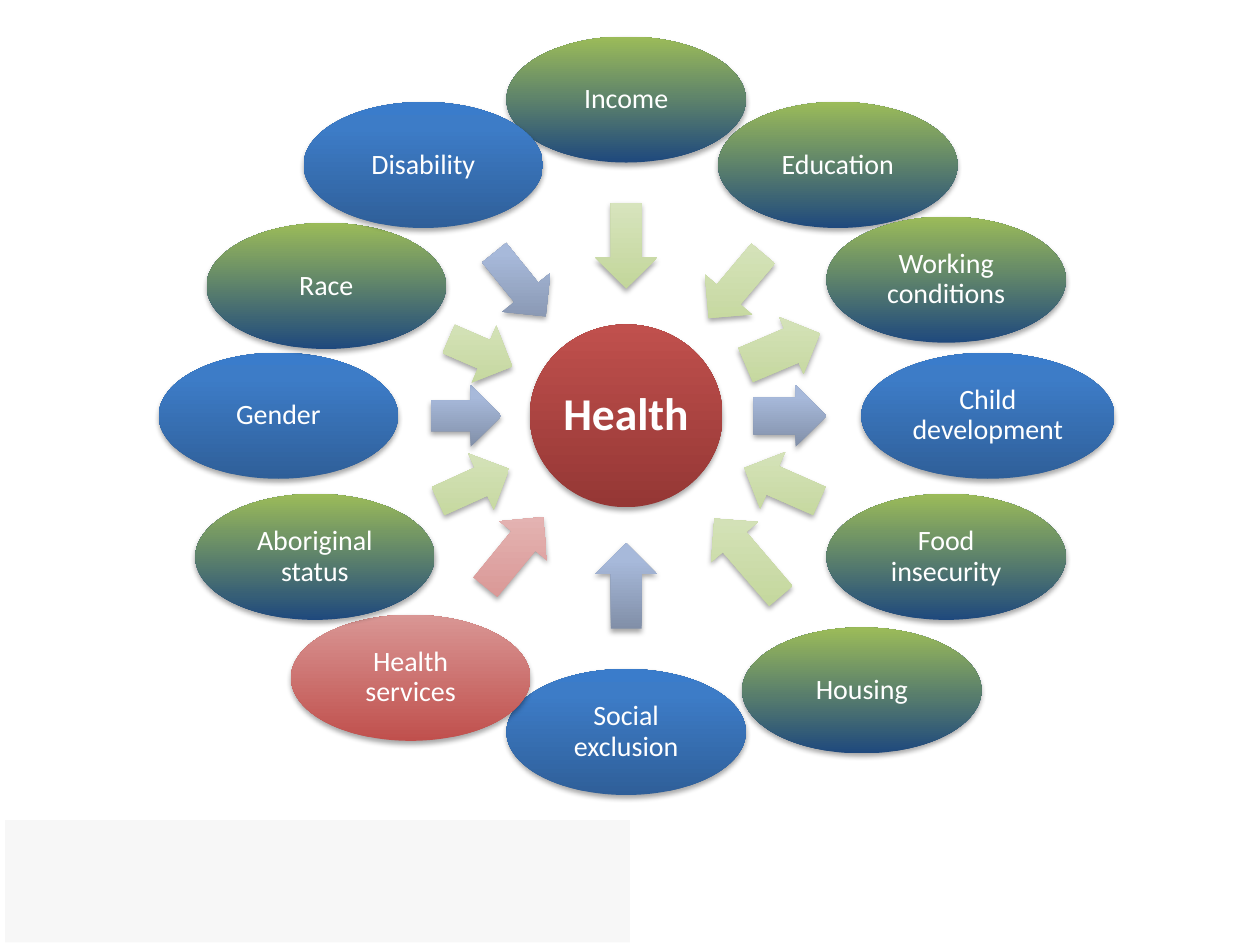
from collections import namedtuple
from dataclasses import dataclass
from math import atan2, cos, degrees, hypot, sin

from lxml import etree
from pptx import Presentation
from pptx.dml.color import RGBColor
from pptx.enum.shapes import MSO_SHAPE
from pptx.enum.text import MSO_ANCHOR, PP_ALIGN
from pptx.oxml.ns import qn
from pptx.util import Inches, Pt

OVAL = MSO_SHAPE.OVAL
RECTANGLE = MSO_SHAPE.RECTANGLE
INWARD = MSO_SHAPE.LEFT_ARROW
OUTWARD = MSO_SHAPE.RIGHT_ARROW
CENTER = PP_ALIGN.CENTER
MIDDLE = MSO_ANCHOR.MIDDLE

COLUMNS, ROWS = 100, 75
HUB_X, HUB_Y = 49.7, 33
OVAL_HEIGHT, ARROW_HEIGHT = 10, 4.9

BLUE_STOPS = ((0, "2F5F99"), (80, "3D7CC7"), (100, "3A7CCB"))
PALE_BLUE_STOPS = ((0, "818FA8"), (80, "A7B9DA"), (100, "A7BADC"))


@dataclass(frozen=True)
class Theme:
    font = "Calibri"
    text = "FFFFFF"
    band = "F7F7F7"
    shadow = "000000"
    hub_size = 26
    factor_size = 16
    hub = ((0, "953735"), (100, "C0504D"))
    ovals = {
        "green": ((0, "1F497D"), (100, "9BBB59")),
        "blue": BLUE_STOPS,
        "red": ((0, "C0504D"), (100, "D99694")),
    }
    arrows = {
        "green": ((0, "C3D69B"), (100, "D7E4BD")),
        "blue": PALE_BLUE_STOPS,
        "red": ((0, "D99694"), (100, "E6B9B8")),
    }


Factor = namedtuple(
    "Factor", "label tone dx dy reach length arrow shaft width",
    defaults=(INWARD, 0.5, 19),
)

FACTORS = [
    Factor("Income", "green", 0, -25.1, 13.5, 6.8),
    Factor("Education", "green", 16.8, -19.9, 13.5, 6.7),
    Factor("Working conditions", "green", 25.4, -10.8, 13.5, 6.4, OUTWARD, 0.6),
    Factor("Child development", "blue", 28.7, 0, 13, 5.8, OUTWARD, 0.6, 20.1),
    Factor("Food insecurity", "green", 25.4, 11.2, 13.5, 6.5),
    Factor("Housing", "green", 18.7, 21.8, 14.8, 8.1),
    Factor("Social exclusion", "blue", 0, 25.1, 13.5, 6.8),
    Factor("Health services", "red", -17.1, 20.8, 14, 7.2),
    Factor("Aboriginal status", "green", -24.7, 11.2, 13.3, 6.2),
    Factor("Gender", "blue", -27.6, 0, 12.7, 5.6),
    Factor("Race", "green", -23.8, -10.3, 12.6, 5.5),
    Factor("Disability", "blue", -16.1, -19.9, 13.4, 6.5),
]


class Diagram:
    def __init__(self, deck, theme):
        self.theme = theme
        self.slide = deck.slides.add_slide(deck.slide_layouts[6])
        self.column = deck.slide_width / COLUMNS
        self.row = deck.slide_height / ROWS

    def shape(self, kind, x, y, width, height):
        shape = self.slide.shapes.add_shape(
            kind,
            round((x - width / 2) * self.column),
            round((y - height / 2) * self.row),
            round(width * self.column),
            round(height * self.row),
        )
        shape.line.fill.background()
        shape.shadow.inherit = False
        return shape

    def band(self, x, y, width, height):
        band = self.shape(RECTANGLE, x, y, width, height)
        band.fill.solid()
        band.fill.fore_color.rgb = RGBColor.from_string(self.theme.band)

    def shade(self, shape, stops):
        shape.fill.background()
        properties = shape.fill._xPr
        gradient = etree.Element(qn("a:gradFill"), rotWithShape="0")
        stop_list = etree.SubElement(gradient, qn("a:gsLst"))
        for position, color in stops:
            stop = etree.SubElement(stop_list, qn("a:gs"), pos=str(position * 1000))
            etree.SubElement(stop, qn("a:srgbClr"), val=color)
        etree.SubElement(gradient, qn("a:lin"), ang="16200000", scaled="0")
        properties.replace(properties.find(qn("a:noFill")), gradient)

        shadow = etree.SubElement(
            properties.find(qn("a:effectLst")), qn("a:outerShdw"),
            blurRad=str(Pt(3.1)), dist=str(Pt(1.8)), dir="5400000", rotWithShape="0",
        )
        tint = etree.SubElement(shadow, qn("a:srgbClr"), val=self.theme.shadow)
        etree.SubElement(tint, qn("a:alpha"), val="35000")

    def oval(self, label, x, y, width, height, stops, size, inset, bold=False):
        oval = self.shape(OVAL, x, y, width, height)
        self.shade(oval, stops)
        frame = oval.text_frame
        margins = dict.fromkeys(
            ("margin_left", "margin_top", "margin_right", "margin_bottom"),
            Inches(inset),
        )
        for name, value in {
            "word_wrap": True, "vertical_anchor": MIDDLE, **margins,
        }.items():
            setattr(frame, name, value)
        paragraph = frame.paragraphs[0]
        paragraph.alignment = CENTER
        paragraph.line_spacing = 0.9
        run = paragraph.add_run()
        run.text = label
        for name, value in {
            "name": self.theme.font, "size": Pt(size), "bold": bold,
        }.items():
            setattr(run.font, name, value)
        run.font.color.rgb = RGBColor.from_string(self.theme.text)

    def arrow(self, factor):
        direction = atan2(factor.dy, factor.dx)
        arrow = self.shape(
            factor.arrow,
            HUB_X + factor.reach * cos(direction),
            HUB_Y + factor.reach * sin(direction),
            factor.length, ARROW_HEIGHT,
        )
        arrow.rotation = degrees(direction) % 360
        arrow.adjustments[0] = factor.shaft
        self.shade(arrow, self.theme.arrows[factor.tone])

    def factor(self, factor):
        self.arrow(factor)
        self.oval(
            factor.label, HUB_X + factor.dx, HUB_Y + factor.dy,
            factor.width, OVAL_HEIGHT, self.theme.ovals[factor.tone],
            self.theme.factor_size, 0.02,
        )


def main():
    deck = Presentation()
    deck.slide_width = Inches(10)
    deck.slide_height = Inches(7.5)
    theme = Theme()
    diagram = Diagram(deck, theme)
    diagram.band(25.2, 69.95, 49.6, 9.7)
    diagram.oval(
        "Health", HUB_X, HUB_Y, 15.3, 14.5, theme.hub, theme.hub_size, 0.04, bold=True
    )
    for factor in FACTORS:
        diagram.factor(factor)
    deck.save("out.pptx")


if __name__ == "__main__":
    main()
